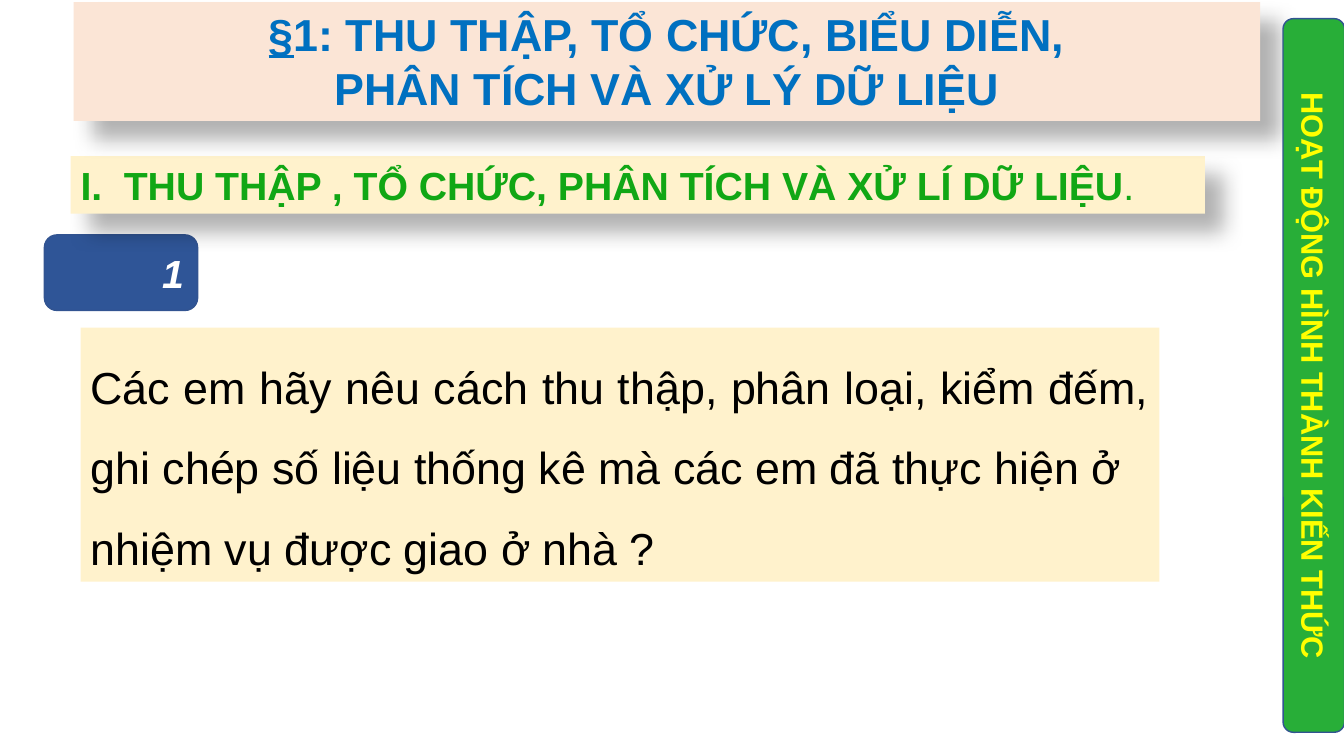
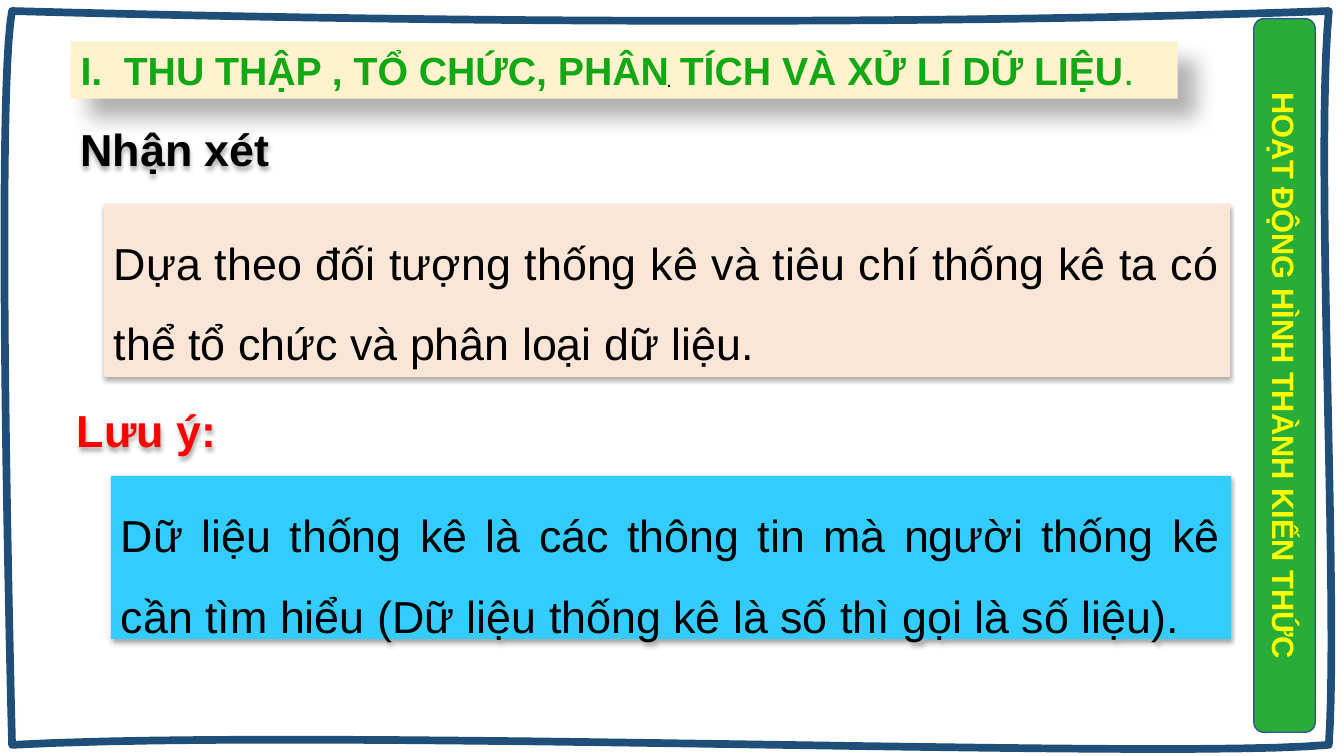
from dataclasses import dataclass
from typing import NamedTuple, Optional, Union

from lxml import etree
from pptx import Presentation
from pptx.dml.color import RGBColor
from pptx.enum.shapes import MSO_SHAPE
from pptx.enum.text import MSO_ANCHOR, PP_ALIGN
from pptx.oxml.ns import qn
from pptx.shapes.autoshape import Shape
from pptx.slide import Slide
from pptx.util import Pt

# Scale: 100 px to the inch
PX = 9144
FONT = "Arial"

RECT, ROUND = MSO_SHAPE.RECTANGLE, MSO_SHAPE.ROUNDED_RECTANGLE
BADGE = MSO_SHAPE.FLOWCHART_ALTERNATE_PROCESS
LEFT, MID, RIGHT, JUST = PP_ALIGN.LEFT, PP_ALIGN.CENTER, PP_ALIGN.RIGHT, PP_ALIGN.JUSTIFY
TOP, CENTER = MSO_ANCHOR.TOP, MSO_ANCHOR.MIDDLE

# Colours
BLACK = RGBColor(0x00, 0x00, 0x00)
WHITE = RGBColor(0xFF, 0xFF, 0xFF)
CREAM = RGBColor(0xFF, 0xF2, 0xCC)
PEACH = RGBColor(0xFB, 0xE5, 0xD6)
SKY = RGBColor(0x33, 0xCC, 0xFF)
NAVY = RGBColor(0x2F, 0x55, 0x97)
EDGE = RGBColor(0x32, 0x54, 0x91)
FRAME = RGBColor(0x1F, 0x4E, 0x79)
BLUE = RGBColor(0x00, 0x70, 0xC0)
GREEN = RGBColor(0x11, 0xA7, 0x15)
BAND = RGBColor(0x28, 0xAE, 0x38)
YELLOW = RGBColor(0xFF, 0xFF, 0x00)
RED = RGBColor(0xFF, 0x00, 0x00)


class Shade(NamedTuple):
    alpha: int
    blur: float
    dist: float
    angle: int


class Run(NamedTuple):
    text: str
    bold: bool = True
    under: bool = False


@dataclass(frozen=True)
class Box:
    x: int
    y: int
    w: int
    h: int
    fill: Optional[RGBColor] = None
    line: Optional[RGBColor] = None
    shade: Optional[Shade] = None
    kind: MSO_SHAPE = RECT
    turn: int = 0


Para = Union[str, list[Run]]
DEEP = Shade(30, 15, 18, 45)
SOFT = Shade(32, 3.5, 2.2, 90)


def cast(shape: Shape, shade: Optional[Shade]) -> None:
    """Replace the theme shadow by the given one, or by none."""
    shape.shadow.inherit = False
    if shade is None:
        return
    effects = shape.element.spPr.find(qn("a:effectLst"))
    outer = etree.SubElement(
        effects, qn("a:outerShdw"), blurRad=str(Pt(shade.blur)), dist=str(Pt(shade.dist)),
        dir=str(shade.angle * 60000), algn="tl", rotWithShape="0")
    color = etree.SubElement(outer, qn("a:srgbClr"), val=str(BLACK))
    etree.SubElement(color, qn("a:alpha"), val=str(shade.alpha * 1000))


def draw(slide: Slide, box: Box) -> Shape:
    """Add a box; one without fill is a plain text box."""
    area = [n * PX for n in (box.x, box.y, box.w, box.h)]
    if box.fill is None:
        shape = slide.shapes.add_textbox(*area)
    else:
        shape = slide.shapes.add_shape(box.kind, *area)
        shape.fill.solid()
        shape.fill.fore_color.rgb = box.fill
        if box.line is None:
            shape.line.fill.background()
        else:
            shape.line.color.rgb = box.line
            shape.line.width = Pt(1)
    shape.rotation = box.turn
    cast(shape, box.shade)
    return shape


def write(shape: Shape, *paras: Para, size: int = 32, color: RGBColor = BLACK,
          bold: bool = False, slant: bool = False, align: PP_ALIGN = LEFT,
          anchor: MSO_ANCHOR = TOP, space: Optional[float] = None,
          tab: int = 0, wrap: bool = True) -> None:
    """Fill a shape with paragraphs in one format."""
    frame = shape.text_frame
    frame.word_wrap = wrap
    frame.vertical_anchor = anchor
    for i, para in enumerate(paras):
        line = frame.add_paragraph() if i else frame.paragraphs[0]
        if tab:
            stops = etree.SubElement(line._p.get_or_add_pPr(), qn("a:tabLst"))
            etree.SubElement(stops, qn("a:tab"), pos=str(tab * PX), algn="l")
        line.alignment = align
        if space:
            line.line_spacing = space
        for piece in [Run(para, bold)] if isinstance(para, str) else para:
            run = line.add_run()
            run.text = piece.text
            font = run.font
            font.name, font.size = FONT, Pt(size)
            font.bold, font.italic = piece.bold, slant
            font.underline = piece.under
            font.color.rgb = color


# Shared parts
def head(slide: Slide, y: int, w: int) -> None:
    shape = draw(slide, Box(70, y, w, 57, CREAM, shade=DEEP))
    title = "I.\tTHU THẬP , TỔ CHỨC, PHÂN TÍCH VÀ XỬ LÍ DỮ LIỆU"
    write(shape, [Run(title), Run(".", False)], size=28, color=GREEN, tab=43)


def side(slide: Slide, x: int) -> None:
    shape = draw(slide, Box(x, 342, 708, 61, BAND, EDGE, kind=ROUND, turn=90))
    write(shape, "HOẠT ĐỘNG HÌNH THÀNH KIẾN THỨC", size=22, color=YELLOW,
          bold=True, align=MID, anchor=CENTER)


def body(slide: Slide, box: Box, *paras: Para) -> None:
    write(draw(slide, box), *paras, align=JUST, space=1.5)


def label(slide: Slide, box: Box, text: str, color: RGBColor, align: PP_ALIGN) -> None:
    write(draw(slide, box), text, color=color, bold=True, align=align)


def border(slide: Slide) -> None:
    """Draw the wavy frame from four Bézier sides."""
    start = (12, 11)
    sides = [
        ((484, 24), (959, 24), (1318, 11)),
        ((1304, 160), (1328, 592), (1318, 739)),
        ((1156, 754), (328, 722), (12, 739)),
        ((10, 661), (-4, 92), start),
    ]
    steps, dots, a = 24, [], start
    for b, c, d in sides:
        for i in range(1, steps + 1):
            t = i / steps
            u = 1 - t
            dots.append(tuple(
                round((u**3 * p + 3 * u * u * t * q + 3 * u * t * t * r + t**3 * s) * PX)
                for p, q, r, s in zip(a, b, c, d)))
        a = d
    path = slide.shapes.build_freeform(start[0] * PX, start[1] * PX)
    path.add_line_segments(dots, close=True)
    shape = path.convert_to_shape()
    shape.fill.background()
    shape.line.color.rgb = FRAME
    shape.line.width = Pt(5.5)
    cast(shape, None)


# Slides
def task(slide: Slide) -> None:
    body(slide, Box(80, 325, 1070, 252, CREAM),
         "Các em hãy nêu cách thu thập, phân loại, kiểm đếm, ",
         "ghi chép số liệu thống kê mà các em đã thực hiện ở",
         "nhiệm vụ được giao ở nhà ?")
    badge = draw(slide, Box(44, 233, 152, 75, NAVY, EDGE, kind=BADGE))
    write(badge, "1", size=28, color=WHITE, bold=True, slant=True,
          align=RIGHT, anchor=CENTER)
    head(slide, 155, 1125)
    title = draw(slide, Box(73, 2, 1177, 118, PEACH, shade=DEEP))
    write(title, [Run("§", under=True), Run("1: THU THẬP, TỔ CHỨC, BIỂU DIỄN,")],
          "PHÂN TÍCH VÀ XỬ LÝ DỮ LIỆU", color=BLUE, bold=True, align=MID)
    side(slide, 949)


def notes(slide: Slide) -> None:
    head(slide, 41, 1098)
    label(slide, Box(70, 116, 236, 64, shade=SOFT), "Nhận xét", BLACK, LEFT)
    write(draw(slide, Box(651, 62, 31, 34)), ".", size=14, align=JUST,
          anchor=CENTER, wrap=False)
    body(slide, Box(110, 472, 1111, 162, SKY, shade=SOFT),
         "Dữ liệu thống kê là các thông tin mà người thống kê cần tìm hiểu "
         "(Dữ liệu thống kê là số thì gọi là số liệu).")
    body(slide, Box(103, 202, 1117, 172, PEACH, shade=SOFT),
         "Dựa theo đối tượng thống kê và tiêu chí thống kê ta có thể tổ chức "
         "và phân loại dữ liệu.")
    label(slide, Box(27, 395, 237, 64, shade=SOFT), "Lưu ý:", RED, MID)
    side(slide, 920)
    border(slide)


def main() -> None:
    deck = Presentation()
    deck.slide_width, deck.slide_height = 1333 * PX, 750 * PX
    blank = deck.slide_layouts[6]
    for build in (task, notes):
        build(deck.slides.add_slide(blank))
    deck.save("out.pptx")


if __name__ == "__main__":
    main()
